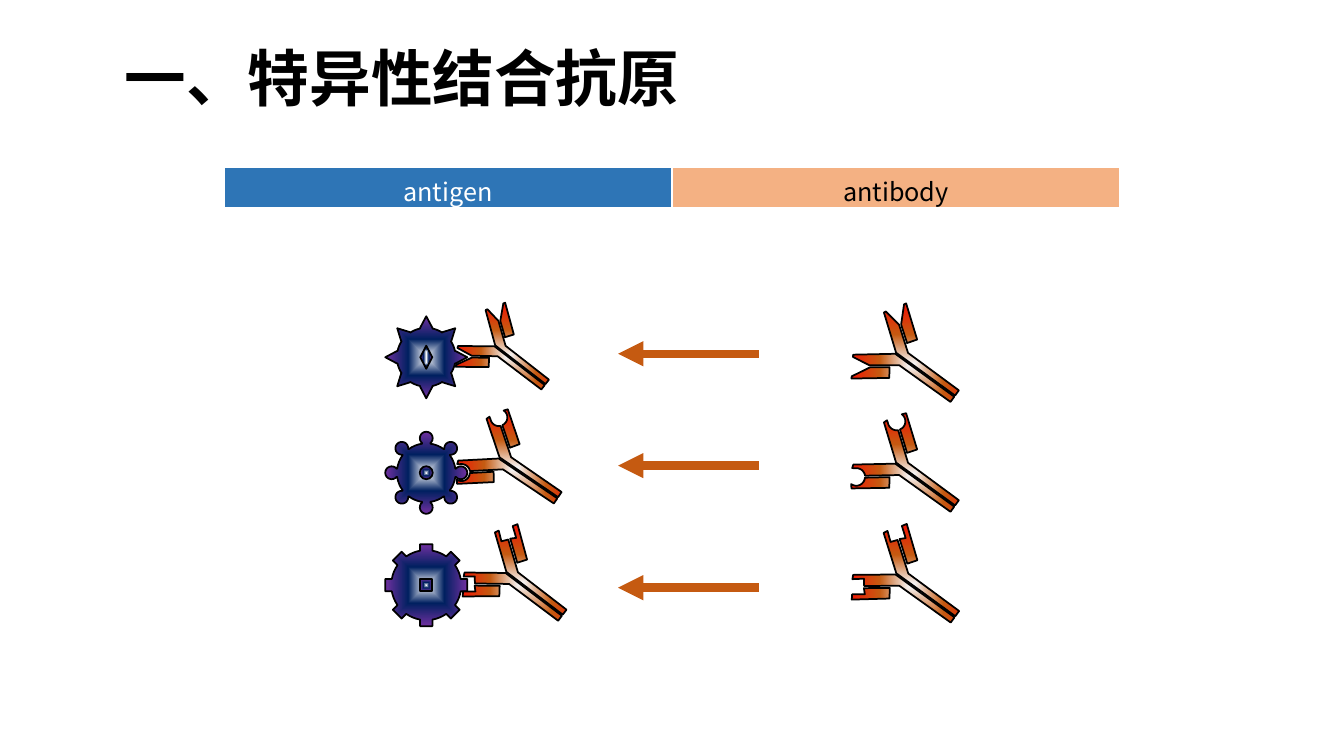
from dataclasses import dataclass
from math import asin, cos, degrees, radians, sin

from pptx import Presentation
from pptx.dml.color import RGBColor
from pptx.enum.shapes import MSO_CONNECTOR, MSO_SHAPE
from pptx.enum.text import MSO_ANCHOR, PP_ALIGN
from pptx.oxml import parse_xml
from pptx.oxml.ns import nsdecls, qn
from pptx.util import Pt

STRAIGHT = MSO_CONNECTOR.STRAIGHT
DIAMOND, OVAL, RECTANGLE = MSO_SHAPE.DIAMOND, MSO_SHAPE.OVAL, MSO_SHAPE.RECTANGLE
MIDDLE, CENTER = MSO_ANCHOR.MIDDLE, PP_ALIGN.CENTER

FONT = "Noto Sans CJK SC"
BLACK, WHITE, BLUE, PEACH, ORANGE = "000000", "FFFFFF", "2E75B6", "F4B183", "C55A11"
ANTIGEN_STOPS = [(0, "F7FAFD"), (44, "002060"), (100, "7030A0")]
ANTIBODY_STOPS = [(0, "F7FAFD"), (44, ORANGE), (100, "FF0000")]

KNOB_COUNT = 8
# Right half of an upright antibody, measured from its centre
LIGHT_BASE = [(16.9, -7.4), (10.7, -11.8)]
HEAVY_BASE = [(5.4, -7.1), (5.1, 38), (0.5, 38), (0.5, -14.1)]


def color(hex_string):
    return RGBColor.from_string(hex_string)


def arc(center_x, center_y, radius, start, end, steps=8):
    """Points on a circle between two angles in degrees, clockwise on the slide."""
    angles = [radians(start + (end - start) * i / steps) for i in range(steps + 1)]
    return [(center_x + radius * cos(a), center_y + radius * sin(a)) for a in angles]


@dataclass
class Binding:
    """One antigen form, the antibody tips that fit it, and the layout of its row."""
    center_y: float
    body_radius: float
    knob: list
    core: tuple
    light_tip: list
    light_notch: list
    heavy_tip: list
    bound_offset: tuple
    bound_scale: float
    bound_rotation: float
    arrow_offset: float
    free_offset: float


BINDINGS = [
    Binding(255.2, 21, [(21, -4.4), (29.3, 0), (21, 4.4)], (DIAMOND, 8.6, 16.5),
            [(31.8, -29.8), (33.2, -29)], [(18.9, -23)],
            [(18.6, -38), (20.1, -37.3), (18, -24.2)],
            (58.7, -0.7), 0.87, 307.6, -2.5, 5.4),
    Binding(337.7, 21, arc(24.7, 0, 4.6, -140, 140, 16), (OVAL, 9.3, 9.3),
            [(30.8, -31), (33.2, -29)], arc(24.6, -31, 6.2, 122, 0),
            [(18.6, -38), (21.1, -37.1)] + arc(24.6, -31, 6.4, 225, 135),
            (63.4, -2.9), 0.97, 304.2, -5.1, 1.4),
    Binding(418, 25, [(24.8, -4.4), (29.3, -4.4), (29.3, 4.4), (24.8, 4.4)],
            (RECTANGLE, 8.6, 8.6),
            [(30.2, -30.8), (33.4, -28.8)], [(21.7, -26.6), (24.8, -23.5)],
            [(18.5, -38.4), (21.3, -37), (16.2, -30.6), (20.3, -27.4)],
            (67.7, -0.8), 0.97, 307.2, 1.8, 0.3),
]


def style_run(run, size, hex_string, bold=False):
    run.font.name = FONT
    run.font.size = Pt(size)
    run.font.bold = bold
    run.font.color.rgb = color(hex_string)
    run.font._element.append(parse_xml(f'<a:ea {nsdecls("a")} typeface="{FONT}"/>'))


def style_radial(shape, stops):
    """Fill a shape from its centre outward and give it a black outline."""
    shape.shadow.inherit = False
    shape.line.color.rgb = color(BLACK)
    shape.line.width = Pt(1.25)
    shape.fill.background()
    stop_xml = "".join(f'<a:gs pos="{position * 1000}"><a:srgbClr val="{value}"/></a:gs>'
                       for position, value in stops)
    gradient = parse_xml(
        f'<a:gradFill {nsdecls("a")} rotWithShape="1"><a:gsLst>{stop_xml}</a:gsLst>'
        '<a:path path="shape"><a:fillToRect l="50000" t="50000" r="50000" b="50000"/>'
        '</a:path></a:gradFill>')
    properties = shape._element.spPr
    properties.replace(properties.find(qn("a:noFill")), gradient)


def add_outline(slide, center_x, center_y, contours, stops, scale=1):
    contours = [[(Pt(center_x + scale * x), Pt(center_y + scale * y)) for x, y in contour]
                for contour in contours]
    builder = slide.shapes.build_freeform(*contours[0][0])
    for index, contour in enumerate(contours):
        if index:
            builder.move_to(*contour[0])
        builder.add_line_segments(contour[1:], close=True)
    shape = builder.convert_to_shape()
    style_radial(shape, stops)
    return shape


def add_antigen(slide, center_x, center_y, binding):
    step = 360 / KNOB_COUNT
    edge = degrees(asin(binding.knob[-1][1] / binding.body_radius))
    outline = []
    for index in range(KNOB_COUNT):
        turn = radians(index * step)
        outline += [(r * cos(turn) - t * sin(turn), r * sin(turn) + t * cos(turn))
                    for r, t in binding.knob]
        outline += arc(0, 0, binding.body_radius,
                       index * step + edge, (index + 1) * step - edge, 4)
    add_outline(slide, center_x, center_y, [outline], ANTIGEN_STOPS)
    preset, width, height = binding.core
    core = slide.shapes.add_shape(preset, Pt(center_x - width / 2), Pt(center_y - height / 2),
                                  Pt(width), Pt(height))
    style_radial(core, ANTIGEN_STOPS)


def add_antibody(slide, center_x, center_y, binding, scale=1, rotation=306):
    half = [binding.light_tip + LIGHT_BASE + binding.light_notch,
            binding.heavy_tip + HEAVY_BASE]
    mirrored = [[(-x, y) for x, y in contour] for contour in half]
    shape = add_outline(slide, center_x, center_y, half + mirrored, ANTIBODY_STOPS, scale)
    shape.rotation = rotation


def add_arrow(slide, start_x, end_x, y):
    arrow = slide.shapes.add_connector(STRAIGHT, Pt(start_x), Pt(y), Pt(end_x), Pt(y))
    arrow.line.color.rgb = color(ORANGE)
    arrow.line.width = Pt(6)
    arrow.line._get_or_add_ln().append(
        parse_xml(f'<a:tailEnd {nsdecls("a")} type="triangle"/>'))
    arrow._element.spPr.append(parse_xml(f'<a:effectLst {nsdecls("a")}/>'))


def add_binding_row(slide, left, center_y, binding):
    """Bound pair, arrow and free antibody, from left to right."""
    antigen_x = left + 29.5
    offset_x, offset_y = binding.bound_offset
    add_antigen(slide, antigen_x, center_y, binding)
    add_antibody(slide, antigen_x + offset_x, center_y + offset_y, binding,
                 binding.bound_scale, binding.bound_rotation)
    add_arrow(slide, left + 267, left + 166.5, center_y + binding.arrow_offset)
    add_antibody(slide, left + 376.2, center_y + binding.free_offset, binding)


def add_title(slide, left, top, width, height):
    box = slide.shapes.add_textbox(Pt(left), Pt(top), Pt(width), Pt(height))
    frame = box.text_frame
    frame.word_wrap = True
    frame.vertical_anchor = MIDDLE
    paragraph = frame.paragraphs[0]
    paragraph.line_spacing = 0.9
    run = paragraph.add_run()
    run.text = "一、特异性结合抗原"
    style_run(run, 44, BLACK, bold=True)


def add_heading_table(slide, left, top, width, height):
    headings = [("antigen", WHITE, BLUE), ("antibody", BLACK, PEACH)]
    table = slide.shapes.add_table(1, len(headings), Pt(left), Pt(top),
                                   Pt(width), Pt(height)).table
    for index, (text, text_color, fill_color) in enumerate(headings):
        cell = table.cell(0, index)
        properties = cell._tc.get_or_add_tcPr()
        for side, weight in (("L", 1), ("R", 1), ("T", 1), ("B", 3)):
            properties.append(parse_xml(
                f'<a:ln{side} {nsdecls("a")} w="{Pt(weight)}"><a:solidFill>'
                f'<a:srgbClr val="{WHITE}"/></a:solidFill></a:ln{side}>'))
        cell.fill.solid()
        cell.fill.fore_color.rgb = color(fill_color)
        paragraph = cell.text_frame.paragraphs[0]
        paragraph.alignment = CENTER
        run = paragraph.add_run()
        run.text = text
        style_run(run, 18, text_color)


def main():
    presentation = Presentation()
    presentation.slide_width, presentation.slide_height = Pt(960), Pt(540)
    slide = presentation.slides.add_slide(presentation.slide_layouts[6])
    add_title(slide, 82, 5.8, 828, 104.4)
    for binding in BINDINGS:
        add_binding_row(slide, 275, binding.center_y, binding)
    add_heading_table(slide, 160, 119.5, 640, 29.5)
    presentation.save("out.pptx")


if __name__ == "__main__":
    main()
